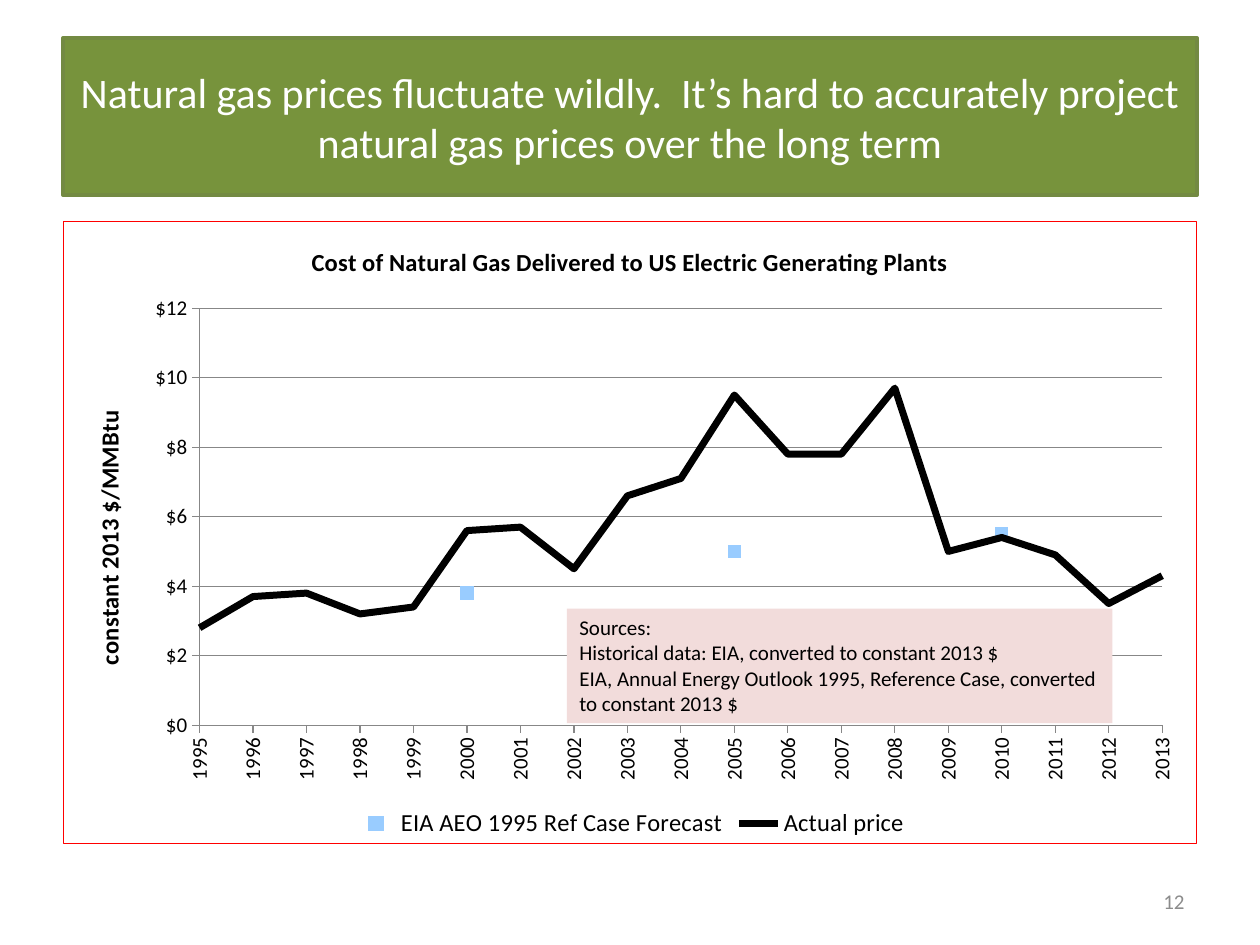
"""Build a slide with a chart of natural gas prices and forecasts."""
from dataclasses import dataclass
from typing import Optional

from lxml import etree
from pptx import Presentation
from pptx.chart import data as chart_data
from pptx.dml.color import RGBColor
from pptx.enum import chart as charts, shapes, text
from pptx.oxml import parse_xml
from pptx.oxml.ns import nsdecls, qn
from pptx.util import Emu, Pt

PX = 9144
FONT = "Calibri"
BLACK, GRAY = "000000", "878787"
YEARS = range(1995, 2014)
FORECAST = {2000: 3.8, 2005: 5, 2010: 5.5}
ACTUAL = [2.8, 3.7, 3.8, 3.2, 3.4, 5.6, 5.7, 4.5, 6.6, 7.1, 9.5, 7.8, 7.8,
          9.7, 5, 5.4, 4.9, 3.5, 4.3]


@dataclass
class Box:
    left: int
    top: int
    width: int
    height: int

    def emu(self) -> list[Emu]:
        return [Emu(v * PX) for v in (self.left, self.top, self.width, self.height)]


@dataclass
class Panel:
    box: Box
    fill: str
    line: Optional[str] = None


TITLE = Panel(Box(50, 30, 900, 125), "77933C", "738A42")
SOURCES = Panel(Box(450, 483, 433, 91), "F2DCDB")
CHART = Box(50, 175, 900, 495)
NUMBER = Box(717, 695, 233, 40)


def color(value: str) -> RGBColor:
    return RGBColor.from_string(value)


def style_font(font, size: int, fill: str = BLACK, bold: bool = False) -> None:
    font.name, font.size, font.bold = FONT, Pt(size), bold
    font.color.rgb = color(fill)


def write(frame, content: str, *, size: int, fill: str = BLACK, bold: bool = False,
          align=text.PP_ALIGN.LEFT, anchor=None) -> None:
    if anchor is not None:
        frame.word_wrap = True
        frame.vertical_anchor = anchor
    frame.text = content
    for paragraph in frame.paragraphs:
        paragraph.alignment = align
        for run in paragraph.runs:
            style_font(run.font, size, fill, bold)


def format_panel(shape, panel: Panel) -> None:
    shape.left, shape.top, shape.width, shape.height = panel.box.emu()
    shape.fill.solid()
    shape.fill.fore_color.rgb = color(panel.fill)
    if panel.line:
        shape.line.color.rgb = color(panel.line)
        shape.line.width = Pt(2)
    else:
        shape.line.fill.background()


def format_axis(axis) -> None:
    style_font(axis.tick_labels.font, 12)
    axis.major_tick_mark = charts.XL_TICK_MARK.OUTSIDE
    axis.minor_tick_mark = charts.XL_TICK_MARK.NONE
    axis.format.line.color.rgb = color(GRAY)


def set_plot_layout(chart, x: float, y: float, w: float, h: float) -> None:
    plot_area = chart._chartSpace.chart.plotArea
    for old in plot_area.findall(qn("c:layout")):
        plot_area.remove(old)
    layout = parse_xml(f"<c:layout {nsdecls('c')}><c:manualLayout/></c:layout>")
    values = {"layoutTarget": "inner", "xMode": "edge", "yMode": "edge",
              "x": x, "y": y, "w": w, "h": h}
    for name, value in values.items():
        etree.SubElement(layout[0], qn(f"c:{name}")).set("val", str(value))
    plot_area.insert(0, layout)


def set_border(chart, line: str) -> None:
    border = parse_xml(
        f'<c:spPr {nsdecls("c", "a")}><a:noFill/><a:ln w="9525"><a:solidFill>'
        f'<a:srgbClr val="{line}"/></a:solidFill></a:ln></c:spPr>')
    chart._chartSpace.chart.addnext(border)


def start_on_axis(axis) -> None:
    crossing = parse_xml(f'<c:crossBetween {nsdecls("c")} val="midCat"/>')
    axis._element.find(qn("c:crosses")).addnext(crossing)


def add_price_chart(slide) -> None:
    data = chart_data.CategoryChartData()
    data.categories = [str(year) for year in YEARS]
    data.add_series("EIA AEO 1995 Ref Case Forecast", [FORECAST.get(year) for year in YEARS])
    data.add_series("Actual price", ACTUAL)
    chart = slide.shapes.add_chart(
        charts.XL_CHART_TYPE.LINE_MARKERS, *CHART.emu(), data).chart
    style_font(chart.font, 10)
    set_border(chart, "FF0000")
    set_plot_layout(chart, 0.12, 0.14, 0.85, 0.67)
    write(chart.chart_title.text_frame, size=14, bold=True, align=text.PP_ALIGN.CENTER,
          content="Cost of Natural Gas Delivered to US Electric Generating Plants")
    chart.has_legend = True
    chart.legend.position = charts.XL_LEGEND_POSITION.BOTTOM
    chart.legend.include_in_layout = False
    style_font(chart.legend.font, 14)

    years, prices = chart.category_axis, chart.value_axis
    for axis in (years, prices):
        format_axis(axis)
    years._element.find(qn("c:txPr")).find(qn("a:bodyPr")).set("rot", "-5400000")
    prices.minimum_scale, prices.maximum_scale, prices.major_unit = 0, 12, 2
    prices.tick_labels.number_format = '"$"#,##0'
    prices.tick_labels.number_format_is_linked = False
    prices.major_gridlines.format.line.color.rgb = color(GRAY)
    start_on_axis(prices)
    heading = prices.axis_title.text_frame
    write(heading, "constant 2013 $/MMBtu", size=14, bold=True, align=text.PP_ALIGN.CENTER)
    heading._txBody.find(qn("a:bodyPr")).set("rot", "-5400000")

    chart.plots[0].vary_by_categories = False
    forecast, actual = chart.plots[0].series
    forecast.smooth = actual.smooth = False
    forecast.format.line.fill.background()
    marker = forecast.marker
    marker.style, marker.size = charts.XL_MARKER_STYLE.SQUARE, 7
    marker.format.fill.solid()
    marker.format.fill.fore_color.rgb = color("99CCFF")
    marker.format.line.fill.background()
    actual.marker.style = charts.XL_MARKER_STYLE.NONE
    actual.format.line.color.rgb = color(BLACK)
    actual.format.line.width = Pt(4)


def main() -> None:
    presentation = Presentation()
    presentation.slide_width, presentation.slide_height = Emu(1000 * PX), Emu(750 * PX)
    slide = presentation.slides.add_slide(presentation.slide_layouts[5])
    title = slide.shapes.title
    format_panel(title, TITLE)
    write(title.text_frame, "Natural gas prices fluctuate wildly.  It’s hard to accurately "
          "project natural gas prices over the long term", size=24, fill="FFFFFF",
          align=text.PP_ALIGN.CENTER, anchor=text.MSO_ANCHOR.MIDDLE)
    add_price_chart(slide)
    number = slide.shapes.add_textbox(*NUMBER.emu())
    write(number.text_frame, "12", size=12, fill="8C8C8C", align=text.PP_ALIGN.RIGHT,
          anchor=text.MSO_ANCHOR.MIDDLE)
    sources = slide.shapes.add_shape(shapes.MSO_SHAPE.RECTANGLE, *SOURCES.box.emu())
    sources.shadow.inherit = False
    format_panel(sources, SOURCES)
    write(sources.text_frame, "Sources:\nHistorical data: EIA, converted to constant 2013 $\n"
          "EIA, Annual Energy Outlook 1995, Reference Case, converted to constant 2013 $",
          size=12, anchor=text.MSO_ANCHOR.TOP)
    presentation.save("out.pptx")


if __name__ == "__main__":
    main()
